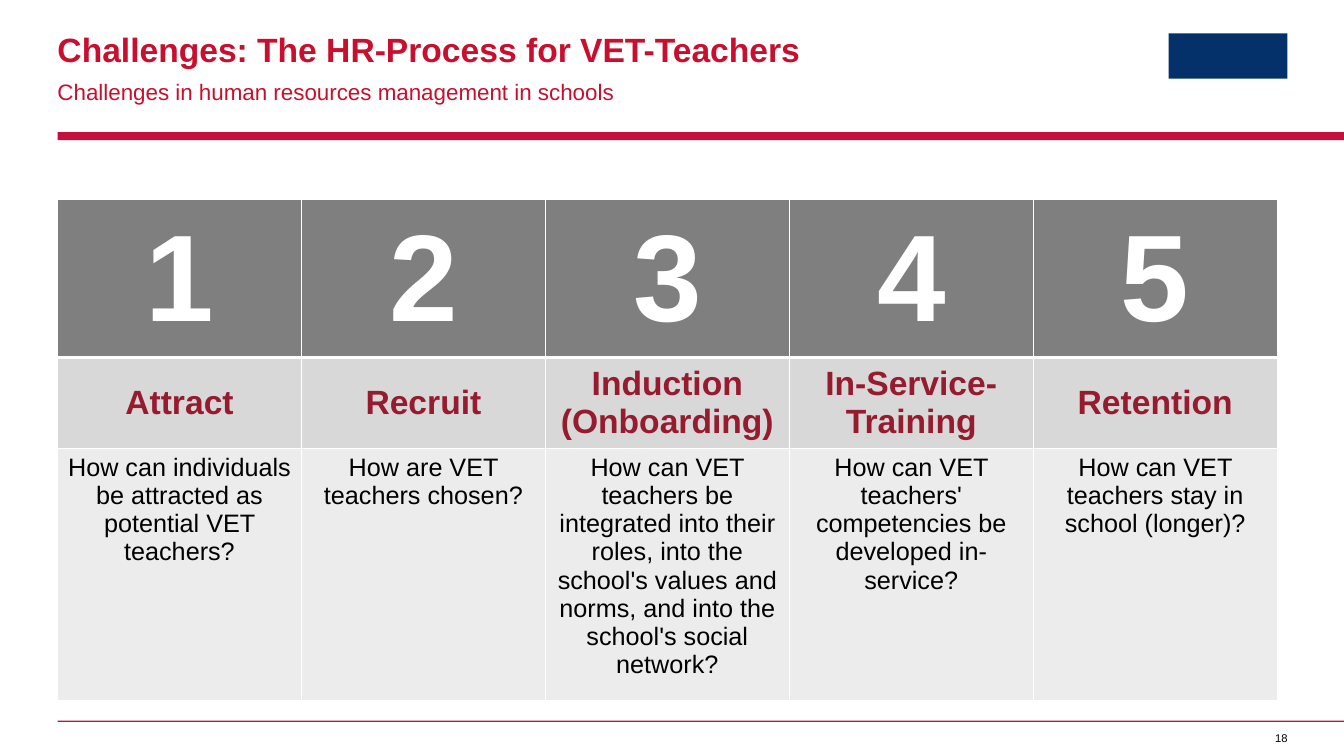
from pptx import Presentation
from pptx import util as u
from pptx.dml.color import RGBColor
from pptx.enum import shapes, text
from pptx.oxml import parse_xml
from pptx.oxml.ns import nsdecls

RED, BAR_RED, DARK_RED, NAVY = "C80F2E", "C50F3C", "971B2F", "04316A"
WHITE, BLACK = "FFFFFF", "000000"
MARGIN = 4.28  # left and right margin, percent of the slide width
CENTER, RIGHT = text.PP_ALIGN.CENTER, text.PP_ALIGN.RIGHT
TOP, MIDDLE = text.MSO_ANCHOR.TOP, text.MSO_ANCHOR.MIDDLE

STAGES = [
    ("1", "Attract",
     "How can individuals be attracted as potential VET teachers?"),
    ("2", "Recruit", "How are VET teachers chosen?"),
    ("3", "Induction\v(Onboarding)",
     "How can VET teachers be integrated into their roles, into the school's "
     "values and norms, and into the school's social network?"),
    ("4", "In-Service-Training",
     "How can VET teachers' competencies be developed in-service?"),
    ("5", "Retention", "How can VET teachers stay in school (longer)?"),
]
# Height in percent, fill, text size, text colour, bold, anchor
ROW_STYLES = [
    (19.6, "7F7F7F", 88, WHITE, True, MIDDLE),
    (11.87, "D8D8D8", 24, DARK_RED, True, MIDDLE),
    (31.2, "ECECEC", 18, BLACK, False, TOP),
]


def color(value):
    return RGBColor.from_string(value)


class SlideBuilder:
    """Places elements on one page; lengths are percent of the slide's size."""

    font = "Arial"

    def __init__(self, deck):
        self.deck = deck
        self.page = deck.slides.add_slide(deck.slide_layouts[6])

    def across(self, share):
        return round(self.deck.slide_width * share / 100)

    def down(self, share):
        return round(self.deck.slide_height * share / 100)

    def area(self, left, top, width, height):
        return (self.across(left), self.down(top),
                self.across(width), self.down(height))

    def style(self, para, size, ink, bold=False, align=None):
        para.alignment = align
        for span in para.runs:
            span.font.name = self.font
            span.font.size = u.Pt(size)
            span.font.bold = bold
            span.font.color.rgb = color(ink)

    def block(self, area, fill):
        shape = self.page.shapes.add_shape(
            shapes.MSO_SHAPE.RECTANGLE, *self.area(*area))
        shape.shadow.inherit = False
        shape.fill.solid()
        shape.fill.fore_color.rgb = color(fill)
        shape.line.fill.background()

    def label(self, area, words, size, ink, bold=False, align=None,
              spacing=None, wrap=True):
        frame = self.page.shapes.add_textbox(*self.area(*area)).text_frame
        frame.margin_left = frame.margin_right = 0
        frame.margin_top = frame.margin_bottom = 0
        frame.word_wrap = wrap
        frame.text = words
        para = frame.paragraphs[0]
        para.line_spacing = spacing
        self.style(para, size, ink, bold, align)

    def border(self, cell, bottom):
        properties = cell._tc.get_or_add_tcPr()
        widths = {"lnL": 1, "lnR": 1, "lnT": 1, "lnB": bottom}
        for index, (side, width) in enumerate(widths.items()):
            properties.insert(index, parse_xml(
                f'<a:{side} {nsdecls("a")} w="{u.Pt(width)}"><a:solidFill>'
                f'<a:srgbClr val="{WHITE}"/></a:solidFill></a:{side}>'))

    def stage_table(self, left, top, column_width, stages, row_styles):
        height = sum(row[0] for row in row_styles)
        area = self.area(left, top, column_width * len(stages), height)
        table = self.page.shapes.add_table(
            len(row_styles), len(stages), *area).table
        for column in table.columns:
            column.width = self.across(column_width)
        for r, (share, fill, size, ink, bold, anchor) in enumerate(row_styles):
            table.rows[r].height = self.down(share)
            for c, stage in enumerate(stages):
                cell = table.cell(r, c)
                cell.vertical_anchor = anchor
                cell.fill.solid()
                cell.fill.fore_color.rgb = color(fill)
                self.border(cell, bottom=3 if r == 0 else 1)
                para = cell.text_frame.paragraphs[0]
                para.text = stage[r]
                self.style(para, size, ink, bold, CENTER)


def main():
    deck = Presentation()
    deck.slide_width, deck.slide_height = u.Inches(13.33), u.Inches(7.5)
    slide = SlideBuilder(deck)

    # Rules and emblem
    slide.block((MARGIN, 17.47, 100 - MARGIN, 1.07), BAR_RED)
    slide.block((MARGIN, 95.33, 100 - MARGIN, 0.15), BAR_RED)
    slide.block((86.95, 4.4, 8.85, 6), NAVY)

    # Page number
    slide.label((94.22, 96.8, 1.58, 1.73), "18", 8, BLACK,
                align=RIGHT, wrap=False)

    # Title and subtitle
    slide.label((MARGIN, 4.4, 56.2, 4.8),
                "Challenges: The HR-Process for VET-Teachers",
                24, RED, bold=True, spacing=0.9)
    slide.label((MARGIN, 10, 56.2, 3.6),
                "Challenges in human resources management in schools",
                16, RED, spacing=1.1)

    # Five stages of the process
    slide.stage_table(MARGIN, 26.4, 18.15, STAGES, ROW_STYLES)

    deck.save("out.pptx")


if __name__ == "__main__":
    main()
